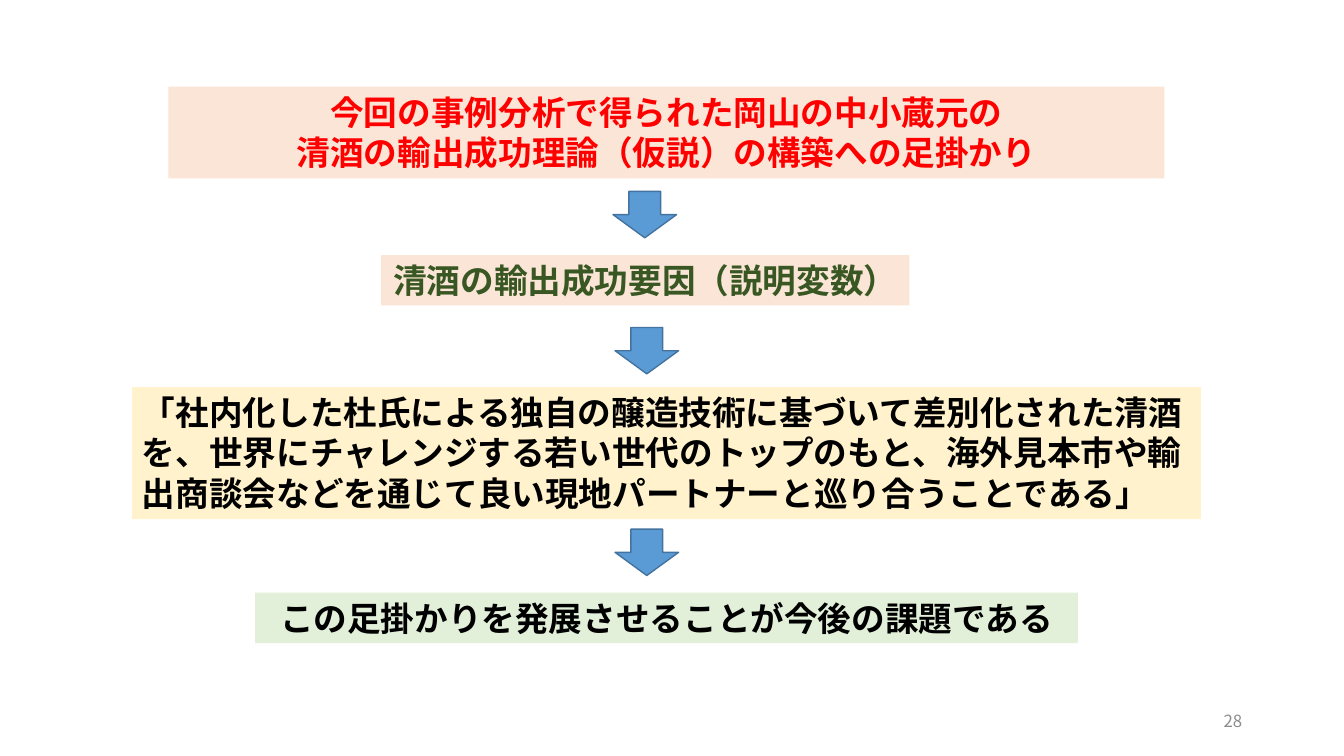
"""Build the slide that leads from sake export cases to the next task."""
from dataclasses import dataclass

from lxml.etree import SubElement
from pptx import Presentation
from pptx.dml.color import RGBColor
from pptx.enum.lang import MSO_LANGUAGE_ID
from pptx.enum.shapes import MSO_SHAPE
from pptx.enum.text import MSO_ANCHOR, MSO_AUTO_SIZE, PP_ALIGN
from pptx.oxml.ns import qn
from pptx.util import Inches, Pt


@dataclass(frozen=True)
class Theme:
    font: str = "Noto Sans CJK JP"
    body: int = 24
    small: int = 12
    edge: int = 1
    peach: str = "FBE5D6"
    cream: str = "FFF2CC"
    mint: str = "E2F0D9"
    red: str = "FF0000"
    green: str = "385723"
    black: str = "000000"
    gray: str = "8C8C8C"
    blue: str = "5B9BD5"
    navy: str = "43739E"


T = Theme()
WIDE, HIGH = 13.33, 7.5
MID, LEFT, RIGHT = PP_ALIGN.CENTER, PP_ALIGN.LEFT, PP_ALIGN.RIGHT

# Areas are left, top, width and height in percent of the slide.
STEPS = [
    (["今回の事例分析で得られた岡山の中小蔵元の",
      "清酒の輸出成功理論（仮説）の構築への足掛かり"],
     (12.53, 11.47, 74.12, 12.13), T.peach, T.red, MID),
    (["清酒の輸出成功要因（説明変数）"],
     (28.36, 33.73, 39.31, 6.67), T.peach, T.green, MID),
    (["「社内化した杜氏による独自の醸造技術に基づいて差別化された清酒"
      "を、世界にチャレンジする若い世代のトップのもと、海外見本市や輸"
      "出商談会などを通じて良い現地パートナーと巡り合うことである」"],
     (9.83, 51.2, 79.52, 17.47), T.cream, T.black, LEFT),
    (["この足掛かりを発展させることが今後の課題である"],
     (18.98, 78.4, 61.22, 6.67), T.mint, T.black, MID),
]
ARROWS = [(45.61, 25.33), (45.76, 43.33), (45.76, 70)]
ARROW = (4.73, 6.13)
PAGE = "28", (70.67, 92.67, 22.5, 5.33)


def place(area):
    return [Inches(part * side / 100)
            for part, side in zip(area, (WIDE, HIGH) * 2)]


def paint(fill, tint):
    fill.solid()
    fill.fore_color.rgb = RGBColor.from_string(tint)


def draw(slide, kind, area, tint):
    shape = slide.shapes.add_shape(kind, *place(area))
    shape.shadow.inherit = False
    paint(shape.fill, tint)
    shape.line.fill.background()
    return shape


def write(frame, lines, size, tint, align, bold):
    frame.word_wrap = True
    for i, line in enumerate(lines):
        para = frame.add_paragraph() if i else frame.paragraphs[0]
        para.alignment = align
        run = para.add_run()
        run.text = line
        font = run.font
        font.size, font.bold, font.name = Pt(size), bold, T.font
        font.language_id = MSO_LANGUAGE_ID.JAPANESE
        paint(font.fill, tint)
        SubElement(run._r.get_or_add_rPr(), qn("a:ea"), typeface=T.font)


def main():
    deck = Presentation()
    deck.slide_width, deck.slide_height = Inches(WIDE), Inches(HIGH)
    slide = deck.slides.add_slide(deck.slide_layouts[6])

    for lines, area, fill, ink, align in STEPS:
        frame = draw(slide, MSO_SHAPE.RECTANGLE, area, fill).text_frame
        frame.vertical_anchor = MSO_ANCHOR.TOP
        frame.auto_size = MSO_AUTO_SIZE.SHAPE_TO_FIT_TEXT
        write(frame, lines, T.body, ink, align, True)

    for spot in ARROWS:
        arrow = draw(slide, MSO_SHAPE.DOWN_ARROW, spot + ARROW, T.blue)
        paint(arrow.line.fill, T.navy)
        arrow.line.width = Pt(T.edge)

    text, area = PAGE
    frame = slide.shapes.add_textbox(*place(area)).text_frame
    frame.vertical_anchor = MSO_ANCHOR.MIDDLE
    write(frame, [text], T.small, T.gray, RIGHT, False)
    deck.save("out.pptx")


if __name__ == "__main__":
    main()
